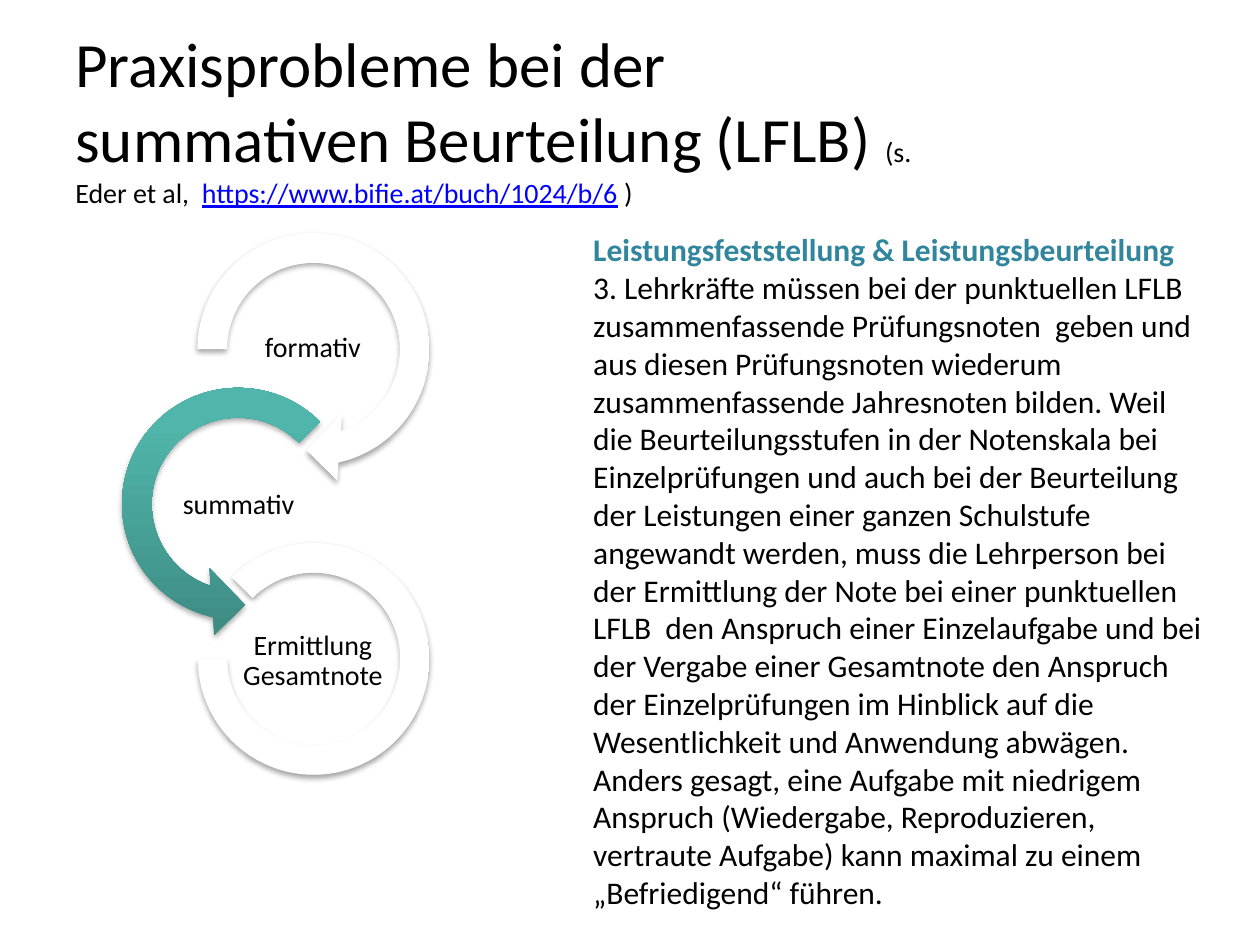
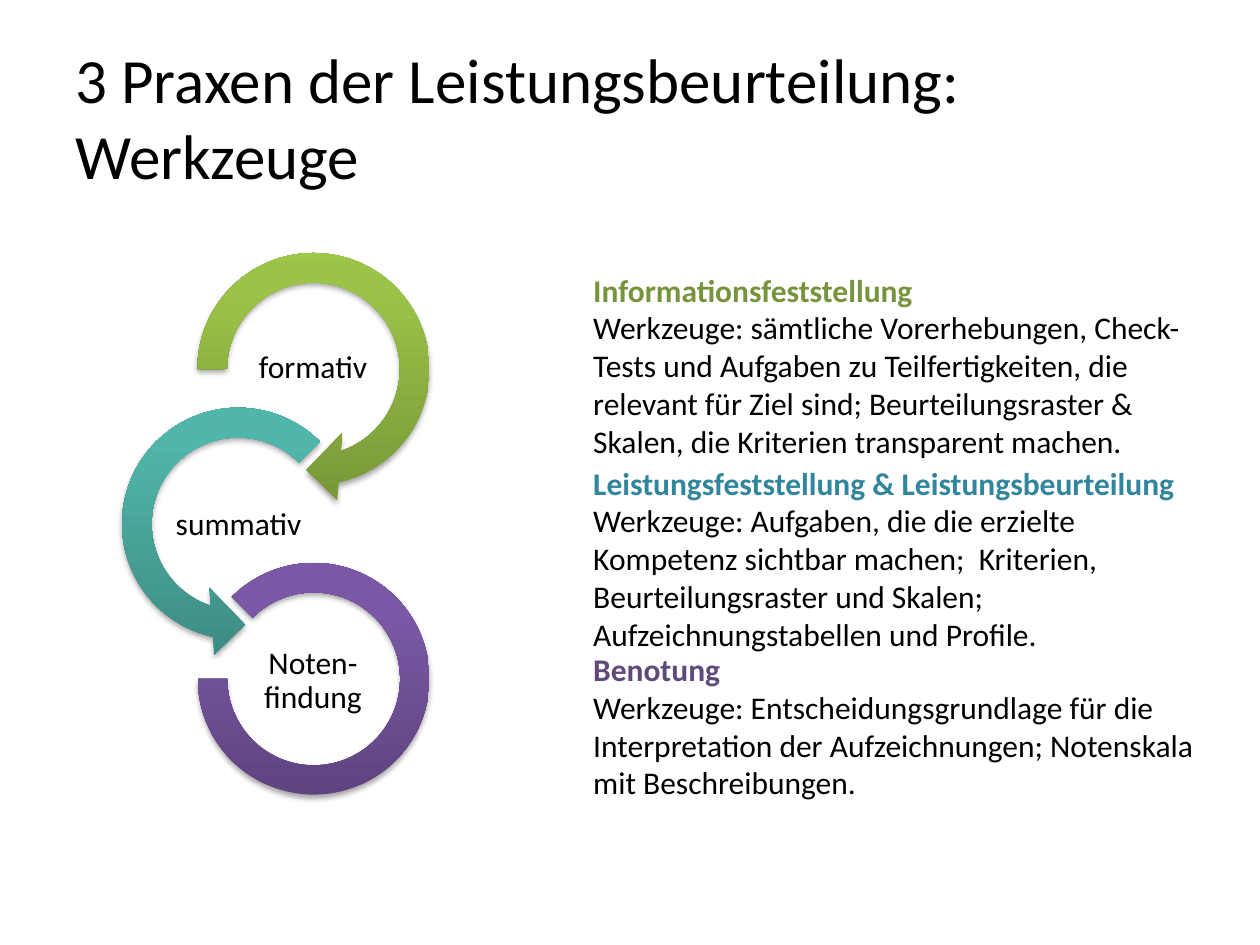
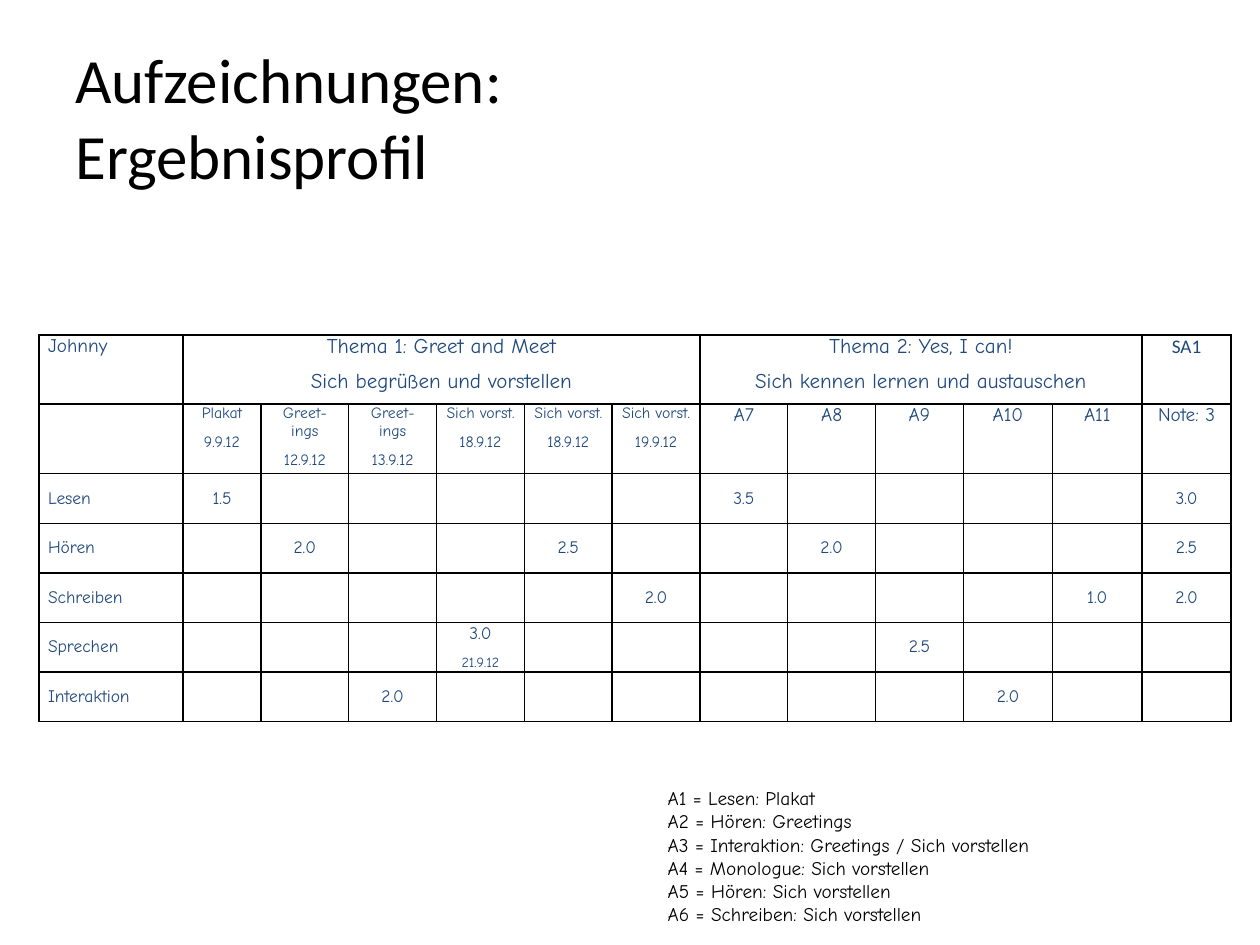
from dataclasses import dataclass

from lxml.etree import SubElement
from pptx import Presentation
from pptx.dml.color import RGBColor
from pptx.enum.shapes import MSO_SHAPE
from pptx.enum.text import MSO_ANCHOR, PP_ALIGN
from pptx.oxml import parse_xml
from pptx.oxml.ns import nsdecls, qn
from pptx.util import Cm, Pt


@dataclass(frozen=True)
class Theme:
    body_font: str = "Calibri"
    table_font: str = "Comic Neue"
    black: str = "000000"
    link: str = "0000FF"
    navy: str = "1F497D"
    green: str = "77933C"
    teal: str = "31859C"
    purple: str = "604A7B"
    white_ring: tuple = ("FFFFFF", "FFFFFF", "FFFFFF")
    green_ring: tuple = ("779737", "9BC348", "9DC746")
    teal_ring: tuple = ("3D8B83", "50B5AA", "4EB8AC")
    purple_ring: tuple = ("5F4480", "7B58A6", "7C57A8")
    title: int = 36
    body: int = 18
    source: int = 16
    theme: int = 12
    head: int = 11
    mark: int = 10
    task: int = 9
    date: int = 8


T = Theme()

# shape, left, top, side, adjustments, label left, label top (cm from the box)
RINGS = [
    (MSO_SHAPE.CIRCULAR_ARROW, 1.52, 0, 5.44,
     (0.11, 11.42, 45, 108, 0.125), 2.72, 1.96),
    (MSO_SHAPE.LEFT_CIRCULAR_ARROW, 0, 3.12, 5.44,
     (0.11, 11.42, 63, 189, 0.125), 1.22, 5.11),
    (MSO_SHAPE.BLOCK_ARC, 1.91, 6.63, 4.67, (135, 108, 0.127), 2.72, 8.26),
]

COLUMNS = [2.9, 1.57] + [1.77] * 8 + [1.8] * 3
ROWS = [1.4] * 2 + [1.0] * 5
TASKS = [("Plakat", "9.9.12"), ("Greet-ings", "12.9.12"),
         ("Greet-ings", "13.9.12"), ("Sich vorst.", "18.9.12"),
         ("Sich vorst.", "18.9.12"), ("Sich vorst.", "19.9.12")]
LATER_TASKS = ["A7", "A8", "A9", "A10", "A11", "Note: 3"]
MARKS = {
    "Lesen": {1: "1.5", 7: "3.5", 12: "3.0"},
    "Hören": {2: "2.0", 5: "2.5", 8: "2.0", 12: "2.5"},
    "Schreiben": {6: "2.0", 11: "1.0", 12: "2.0"},
    "Sprechen": {4: "3.0", 9: "2.5"},
    "Interaktion": {3: "2.0", 10: "2.0"},
}
LEGEND = ["A1 = Lesen: Plakat", "A2 = Hören: Greetings",
          "A3 = Interaktion: Greetings / Sich vorstellen",
          "A4 = Monologue: Sich vorstellen",
          "A5 = Hören: Sich vorstellen", "A6 = Schreiben: Sich vorstellen"]


def set_font(font, size, color, name=T.body_font, bold=False):
    font.name = name
    font.size = Pt(size)
    font.bold = bold
    font.color.rgb = RGBColor.from_string(color)


def write_lines(tf, lines, align=PP_ALIGN.LEFT):
    """Fill a text frame with paragraphs; a line is text and set_font arguments."""
    for i, (text, *style) in enumerate(lines):
        p = tf.add_paragraph() if i else tf.paragraphs[0]
        p.text = text
        p.alignment = align
        set_font(p.font, *style)


def add_box(slide, box, anchor=MSO_ANCHOR.TOP):
    tf = slide.shapes.add_textbox(*map(Cm, box)).text_frame
    tf.word_wrap = True
    tf.vertical_anchor = anchor
    return tf


def add_title(slide, width, parts):
    """Write the title from (text, size, color, underline) runs."""
    tf = add_box(slide, (1.27, 0.76, width, 3.18), MSO_ANCHOR.MIDDLE)
    p = tf.paragraphs[0]
    p.font.name = T.body_font
    for i, (text, size, color, underline) in enumerate(parts):
        for j, line in enumerate(text.split("\n")):
            if j:
                p.add_line_break()
            r = p.add_run()
            r.text = line
            r.font.size = Pt(size)
            r.font.underline = underline
            r.font.color.rgb = RGBColor.from_string(color)


def paint_ring(sp, colors):
    """Fill upwards through three colours and cast a soft shadow below."""
    sp.line.fill.background()
    stops = "".join(f'<a:gs pos="{pos}"><a:srgbClr val="{c}"/></a:gs>'
                    for pos, c in zip((0, 80000, 100000), colors))
    gradient = parse_xml(f'<a:gradFill {nsdecls("a")} rotWithShape="1"><a:gsLst>{stops}'
                         '</a:gsLst><a:lin ang="16200000" scaled="0"/></a:gradFill>')
    shadow = parse_xml(f'<a:effectLst {nsdecls("a")}><a:outerShdw blurRad="40000" '
                       'dist="23000" dir="5400000" rotWithShape="0"><a:srgbClr val="000000">'
                       '<a:alpha val="35000"/></a:srgbClr></a:outerShdw></a:effectLst>')
    line = sp.line._ln
    line.addprevious(gradient)
    line.addnext(shadow)


def add_rings(slide, left, top, labels, size, palettes):
    for ring, text, colors in zip(RINGS, labels, palettes):
        kind, x, y, side, adjustments, label_x, label_y = ring
        sp = slide.shapes.add_shape(kind, Cm(left + x), Cm(top + y), Cm(side), Cm(side))
        for i, value in enumerate(adjustments):
            sp.adjustments[i] = value
        paint_ring(sp, colors)
        tf = add_box(slide, (left + label_x, top + label_y, 3.02, 1.5), MSO_ANCHOR.MIDDLE)
        tf.margin_left = tf.margin_right = tf.margin_top = tf.margin_bottom = Cm(0.03)
        write_lines(tf, [(text, size, T.black)], PP_ALIGN.CENTER)
        tf.paragraphs[0].line_spacing = 0.9


def add_section(slide, box, heading, color, text):
    write_lines(add_box(slide, box), [(heading, T.body, color, T.body_font, True),
                                      (text, T.body, T.black)])


def style_cell(cell, anchor):
    cell.margin_left = cell.margin_right = Cm(0.18)
    cell.margin_top = cell.margin_bottom = 0
    cell.vertical_anchor = anchor
    tc_pr = cell._tc.get_or_add_tcPr()
    for side in ("lnL", "lnR", "lnT", "lnB"):
        ln = SubElement(tc_pr, qn(f"a:{side}"), w=str(Pt(1)))
        fill = SubElement(ln, qn("a:solidFill"))
        SubElement(fill, qn("a:srgbClr"), val=T.black)
    cell.fill.background()


def profile_cells():
    """Map (row, column) to the (text, size) lines of each filled cell."""
    cells = {
        (0, 0): [("Johnny", T.head)],
        (0, 1): [("Thema 1: Greet and Meet", T.theme),
                 ("Sich begrüßen und vorstellen", T.theme)],
        (0, 7): [("Thema 2: Yes, I can!", T.theme),
                 ("Sich kennen lernen und austauschen", T.theme)],
        (0, 12): [("SA1", T.head)],
    }
    for col, task in enumerate(TASKS, 1):
        cells[1, col] = [(line, T.task) for line in task]
    for col, task in enumerate(LATER_TASKS, 7):
        cells[1, col] = [(task, T.head)]
    for row, (skill, marks) in enumerate(MARKS.items(), 2):
        for col, text in {0: skill, **marks}.items():
            cells[row, col] = [(text, T.mark)]
    cells[5, 4].append(("21.9.12", T.date))
    return cells


def add_profile_table(slide, left, top):
    frame = slide.shapes.add_table(len(ROWS), len(COLUMNS), Cm(left), Cm(top),
                                   Cm(sum(COLUMNS)), Cm(sum(ROWS)))
    table = frame.table
    table.first_row = table.horz_banding = False
    for column, width in zip(table.columns, COLUMNS):
        column.width = Cm(width)
    for row, height in zip(table.rows, ROWS):
        row.height = Cm(height)
    for first, last in ((1, 6), (7, 11)):
        table.cell(0, first).merge(table.cell(0, last))
    contents = profile_cells()
    for row in range(len(ROWS)):
        for col in range(len(COLUMNS)):
            cell = table.cell(row, col)
            style_cell(cell, MSO_ANCHOR.MIDDLE if row > 1 else MSO_ANCHOR.TOP)
            font = T.body_font if (row, col) == (0, 12) else T.table_font
            lines = [(text, size, T.navy, font)
                     for text, size in contents.get((row, col), [("", T.mark)])]
            write_lines(cell.text_frame, lines,
                        PP_ALIGN.CENTER if col else PP_ALIGN.JUSTIFY)
            for p in cell.text_frame.paragraphs:
                p.space_after = Pt(6)


def add_legend(slide, box):
    write_lines(add_box(slide, box, MSO_ANCHOR.MIDDLE),
                [(line, T.head, T.black, T.table_font) for line in LEGEND],
                PP_ALIGN.JUSTIFY)


def build_problems(slide):
    add_title(slide, 18.44, [
        ("Praxisprobleme bei der summativen Beurteilung (LFLB) ", T.title, T.black, False),
        ("(s. Eder et al,  ", T.source, T.black, False),
        ("https://www.bifie.at/buch/1024/b/6", T.source, T.link, True),
        (" )", T.source, T.black, False)])
    add_rings(slide, 2.08, 4.32, ["formativ", "summativ", "Ermittlung Gesamtnote"],
              T.source, [T.white_ring, T.teal_ring, T.white_ring])
    add_section(
        slide, (11.71, 4.52, 13, 14.1),
        "Leistungsfeststellung & Leistungsbeurteilung", T.teal,
        "3. Lehrkräfte müssen bei der punktuellen LFLB zusammenfassende Prüfungsnoten  "
        "geben und aus diesen Prüfungsnoten wiederum zusammenfassende Jahresnoten bilden. "
        "Weil die Beurteilungsstufen in der Notenskala bei Einzelprüfungen und auch bei der "
        "Beurteilung der Leistungen einer ganzen Schulstufe angewandt werden, muss die "
        "Lehrperson bei der Ermittlung der Note bei einer punktuellen LFLB  den Anspruch "
        "einer Einzelaufgabe und bei der Vergabe einer Gesamtnote den Anspruch der "
        "Einzelprüfungen im Hinblick auf die Wesentlichkeit und Anwendung abwägen. "
        "Anders gesagt, eine Aufgabe mit niedrigem Anspruch (Wiedergabe, Reproduzieren, "
        "vertraute Aufgabe) kann maximal zu einem „Befriedigend“ führen.")


def build_tools(slide):
    add_title(slide, 18.62, [
        ("3 Praxen der Leistungsbeurteilung: Werkzeuge", T.title, T.black, False)])
    add_rings(slide, 2.08, 4.72, ["formativ", "summativ", "Noten-\nfindung"],
              T.body, [T.green_ring, T.teal_ring, T.purple_ring])
    add_section(
        slide, (11.71, 5.33, 13.21, 4.11), "Informationsfeststellung", T.green,
        "Werkzeuge: sämtliche Vorerhebungen, Check-Tests und Aufgaben zu "
        "Teilfertigkeiten, die relevant für Ziel sind; Beurteilungsraster & Skalen, "
        "die Kriterien transparent machen.")
    add_section(
        slide, (11.71, 9.22, 12.6, 4.11),
        "Leistungsfeststellung & Leistungsbeurteilung", T.teal,
        "Werkzeuge: Aufgaben, die die erzielte Kompetenz sichtbar machen;  Kriterien, "
        "Beurteilungsraster und Skalen; Aufzeichnungstabellen und Profile.")
    add_section(
        slide, (11.71, 12.98, 13, 3.33), "Benotung", T.purple,
        "Werkzeuge: Entscheidungsgrundlage für die Interpretation der Aufzeichnungen; "
        "Notenskala mit Beschreibungen.")


def build_profile(slide):
    add_title(slide, 18.24, [
        ("Aufzeichnungen:\nErgebnisprofil", T.title, T.black, False)])
    add_profile_table(slide, 0.79, 6.75)
    add_legend(slide, (13.21, 15.72, 12.12, 3.07))


def main():
    prs = Presentation()
    prs.slide_width, prs.slide_height = Cm(25.4), Cm(19.05)
    for build in (build_problems, build_tools, build_profile):
        build(prs.slides.add_slide(prs.slide_layouts[6]))
    prs.save("out.pptx")


if __name__ == "__main__":
    main()
